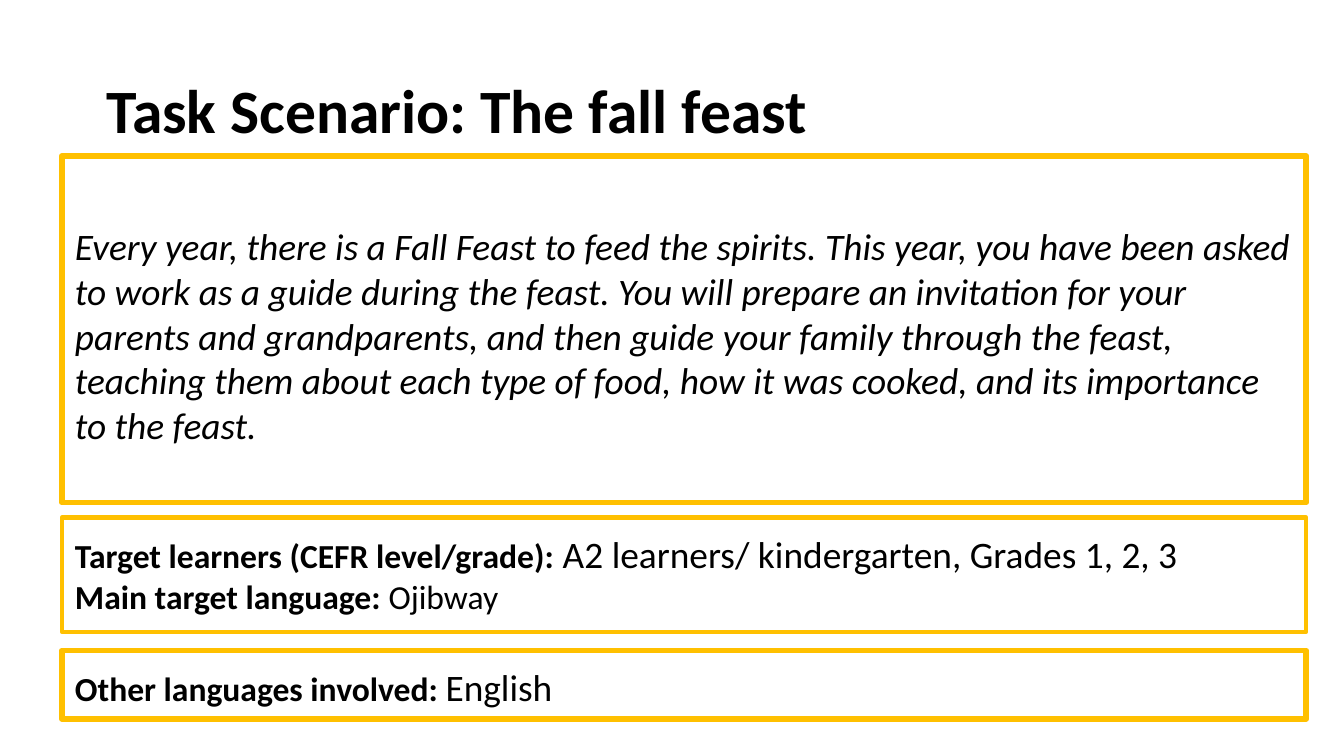
from dataclasses import dataclass

import pptx
import pptx.dml.color
import pptx.enum.shapes
import pptx.enum.text
import pptx.util

Inches = pptx.util.Inches
Pt = pptx.util.Pt
ANCHOR = pptx.enum.text.MSO_ANCHOR
LEFT = pptx.enum.text.PP_ALIGN.LEFT

BLACK = "000000"
GOLD = "FFC000"
SLIDE_WIDTH = 10
SLIDE_HEIGHT = SLIDE_WIDTH * 9 / 16
PANEL_LEFT, PANEL_WIDTH = 0.46, 9.26
INSET = 0.1


@dataclass(frozen=True)
class Run:
    text: str
    size: float = 20
    bold: bool = False
    italic: bool = False
    font: str = "Calibri"


@dataclass(frozen=True)
class Panel:
    top: float
    height: float
    paragraphs: tuple[tuple[Run, ...], ...]
    line_width: float = 3
    top_inset: float = INSET


PANELS = (
    Panel(1.16, 2.58, ((Run(
        "Every year, there is a Fall Feast to feed the spirits. This year, "
        "you have been asked to work as a guide during the feast. You will "
        "prepare an invitation for your parents and grandparents, and then "
        "guide your family through the feast, teaching them about each type "
        "of food, how it was cooked, and its importance to the feast.",
        italic=True),),), top_inset=0.5),
    Panel(3.85, 0.85, (
        (Run("Target learners (CEFR level/grade):", 18, bold=True),
         Run(" A2 learners/ kindergarten, Grades 1, 2, 3")),
        (Run("Main target language: ", 18, bold=True), Run("Ojibway", 18)),
    ), line_width=2.25),
    Panel(4.84, 0.51, (
        (Run("Other languages involved:", 18, bold=True),
         Run(" ", 14, font="Arial"), Run("English")),
    )),
)


def color(value: str) -> pptx.dml.color.RGBColor:
    return pptx.dml.color.RGBColor.from_string(value)


def write(frame, paragraphs: tuple[tuple[Run, ...], ...], *,
          anchor=ANCHOR.TOP, top_inset: float = INSET,
          line_spacing: float = 1.0) -> None:
    frame.word_wrap = True
    frame.auto_size = pptx.enum.text.MSO_AUTO_SIZE.NONE
    frame.vertical_anchor = anchor
    frame.margin_left = frame.margin_right = frame.margin_bottom = Inches(INSET)
    frame.margin_top = Inches(top_inset)
    for index, runs in enumerate(paragraphs):
        paragraph = frame.add_paragraph() if index else frame.paragraphs[0]
        paragraph.alignment = LEFT
        paragraph.line_spacing = line_spacing
        for item in runs:
            run = paragraph.add_run()
            run.text = item.text
            run.font.name = item.font
            run.font.size = Pt(item.size)
            run.font.bold = item.bold
            run.font.italic = item.italic
            run.font.color.rgb = color(BLACK)


def draw_panel(slide, panel: Panel) -> None:
    box = slide.shapes.add_shape(
        pptx.enum.shapes.MSO_SHAPE.RECTANGLE,
        Inches(PANEL_LEFT), Inches(panel.top),
        Inches(PANEL_WIDTH), Inches(panel.height))
    box.shadow.inherit = False
    box.fill.background()
    box.line.color.rgb = color(GOLD)
    box.line.width = Pt(panel.line_width)
    write(box.text_frame, panel.paragraphs, top_inset=panel.top_inset)


def main() -> None:
    deck = pptx.Presentation()
    deck.slide_width = Inches(SLIDE_WIDTH)
    deck.slide_height = Inches(SLIDE_HEIGHT)
    slide = deck.slides.add_slide(deck.slide_layouts.get_by_name("Title Only"))

    title = slide.shapes.title
    title.left, title.top = Inches(0.69), Inches(0.3)
    title.width, title.height = Inches(8.62), Inches(1.09)
    write(title.text_frame,
          ((Run("Task Scenario: The fall feast", 33, bold=True),),),
          anchor=ANCHOR.MIDDLE, line_spacing=0.9)

    for panel in PANELS:
        draw_panel(slide, panel)
    deck.save("out.pptx")


if __name__ == "__main__":
    main()
